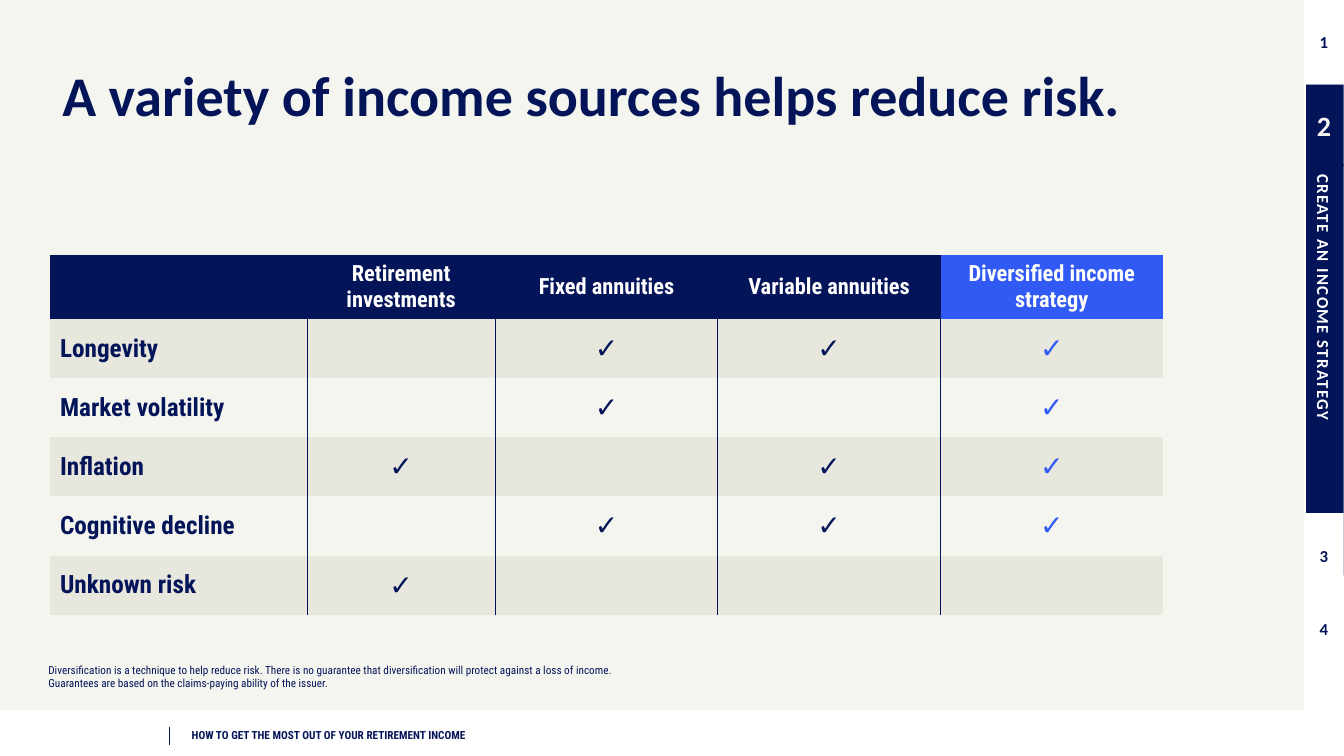
from lxml import etree
from pptx import Presentation
from pptx import util as u
from pptx.dml.color import RGBColor
from pptx.enum import shapes, text
from pptx.oxml import ns

NAVY = RGBColor(0x04, 0x14, 0x59)
BLUE = RGBColor(0x30, 0x5A, 0xF3)
IVORY = RGBColor(0xF5, 0xF5, 0xF0)
SAND = RGBColor(0xE7, 0xE7, 0xDD)
WHITE = RGBColor(0xFF, 0xFF, 0xFF)
CONDENSED = "Roboto Condensed"
PLAIN_TABLE = "{2D5ABB26-0587-4C30-8999-92F81FD0307C}"

HEADINGS = ["", "Retirement investments", "Fixed annuities",
            "Variable annuities", "Diversified income strategy"]
COVERAGE = [
    ("Longevity", "", "✓", "✓", "✓"),
    ("Market volatility", "", "✓", "", "✓"),
    ("Inflation", "✓", "", "✓", "✓"),
    ("Cognitive decline", "", "✓", "✓", "✓"),
    ("Unknown risk", "✓", "", "", ""),
]
COLUMN_WIDTHS = [6.48, 4.74, 5.61, 5.61, 5.61]
ROW_HEIGHT = 1.49
DISCLOSURES = [
    "Diversification is a technique to help reduce risk. There is no guarantee "
    "that diversification will protect against a loss of income.",
    "Guarantees are based on the claims-paying ability of the issuer.",
]


def write(paragraph, wording, size=12, font="Calibri", color=NAVY, bold=True,
          align=text.PP_ALIGN.LEFT, spacing=None, after=None, tracking=None):
    paragraph.alignment = align
    paragraph.line_spacing = spacing
    if after is not None:
        paragraph.space_after = u.Pt(after)
    run = paragraph.add_run()
    run.text = wording
    run.font.size = u.Pt(size)
    run.font.name = font
    run.font.bold = bold
    run.font.color.rgb = color
    if tracking:
        run.font._element.set("spc", str(tracking))


def add_block(slide, left, top, width, height, fill):
    block = slide.shapes.add_shape(shapes.MSO_SHAPE.RECTANGLE, u.Cm(left),
                                   u.Cm(top), u.Cm(width), u.Cm(height))
    block.shadow.inherit = False
    block.fill.solid()
    block.fill.fore_color.rgb = fill
    block.line.fill.background()
    return block


def add_tab(slide, top, height, wording, fill=WHITE, vertical=False, **style):
    tab = add_block(slide, 32.87, top, 0.99, height, fill)
    tab.text_frame.vertical_anchor = text.MSO_ANCHOR.MIDDLE
    if vertical:
        tab.element.txBody.bodyPr.set("vert", "vert")
    write(tab.text_frame.paragraphs[0], wording, **style)


def add_rule(slide, x, top, bottom, color, weight):
    rule = slide.shapes.add_connector(shapes.MSO_CONNECTOR.STRAIGHT, u.Cm(x),
                                      u.Cm(top), u.Cm(x), u.Cm(bottom))
    rule.line.color.rgb = color
    rule.line.width = u.Pt(weight)
    etree.SubElement(rule.element.spPr, ns.qn("a:effectLst"))


def add_text(slide, left, top, width, height, wordings, inset=None,
             anchor=text.MSO_ANCHOR.TOP, **style):
    frame = slide.shapes.add_textbox(u.Cm(left), u.Cm(top), u.Cm(width),
                                     u.Cm(height)).text_frame
    frame.word_wrap = True
    frame.vertical_anchor = anchor
    if inset is not None:
        frame.margin_left = frame.margin_right = u.Cm(inset)
        frame.margin_top = frame.margin_bottom = u.Cm(inset)
    for index, wording in enumerate(wordings):
        paragraph = frame.add_paragraph() if index else frame.paragraphs[0]
        write(paragraph, wording, **style)


def add_border(cell, side):
    border = etree.SubElement(cell._tc.get_or_add_tcPr(), ns.qn(f"a:{side}"),
                              w=str(u.Pt(1)))
    fill = etree.SubElement(border, ns.qn("a:solidFill"))
    etree.SubElement(fill, ns.qn("a:srgbClr"), val=str(NAVY))


def cell_look(row, column):
    last = column == len(HEADINGS) - 1
    centred = text.PP_ALIGN.CENTER
    if row == 0:
        return BLUE if last else NAVY, dict(size=16, font=CONDENSED,
                                            color=WHITE, align=centred)
    band = SAND if row % 2 else IVORY
    if column == 0:
        return band, dict(size=18, font=CONDENSED)
    return band, dict(size=20, font="Cabin", align=centred,
                      color=BLUE if last else NAVY)


def add_coverage_table(slide):
    rows = [HEADINGS, *COVERAGE]
    table = slide.shapes.add_table(
        len(rows), len(HEADINGS), u.Cm(1.26), u.Cm(6.43),
        u.Cm(sum(COLUMN_WIDTHS)), u.Cm(ROW_HEIGHT * len(rows))).table
    table.first_row = table.horz_banding = False
    table._tbl.tblPr.find(ns.qn("a:tableStyleId")).text = PLAIN_TABLE
    for column, width in zip(table.columns, COLUMN_WIDTHS):
        column.width = u.Cm(width)
    for r, wordings in enumerate(rows):
        table.rows[r].height = u.Cm(ROW_HEIGHT)
        for c, wording in enumerate(wordings):
            cell = table.cell(r, c)
            fill, style = cell_look(r, c)
            if c > 0:
                add_border(cell, "lnL")
            if c < len(HEADINGS) - 1:
                add_border(cell, "lnR")
            cell.fill.solid()
            cell.fill.fore_color.rgb = fill
            cell.vertical_anchor = text.MSO_ANCHOR.MIDDLE
            if wording:
                write(cell.text_frame.paragraphs[0], wording, **style)


def main():
    deck = Presentation()
    deck.slide_width, deck.slide_height = u.Cm(33.87), u.Cm(19.05)
    slide = deck.slides.add_slide(deck.slide_layouts[6])
    centred = text.PP_ALIGN.CENTER

    add_rule(slide, 4.27, 18.31, 18.77, NAVY, 1)
    add_text(slide, 4.83, 18.36, 17.6, 0.33,
             ["HOW TO GET THE MOST OUT OF YOUR RETIREMENT INCOME"],
             inset=0, size=8, font=CONDENSED)

    add_tab(slide, 2.13, 2.06, "2", fill=NAVY, size=20, color=IVORY,
            align=centred)
    add_tab(slide, 4.14, 10.36, "CREATE AN INCOME STRATEGY", fill=NAVY,
            vertical=True, color=WHITE, tracking=100)
    for number, top in (("3", 12.93), ("1", 0), ("4", 14.78)):
        add_tab(slide, top, 2.13, number, align=centred)

    add_block(slide, 0, 0, 32.89, 17.9, IVORY)
    add_rule(slide, 32.89, 0, 19.05, WHITE, 1.5)
    add_text(slide, 1.32, 1.6, 28.6, 1.65,
             ["A variety of income sources helps reduce risk."],
             size=40, spacing=0.9)
    add_coverage_table(slide)
    add_text(slide, 0.97, 16.43, 31.09, 1.09, DISCLOSURES,
             anchor=text.MSO_ANCHOR.BOTTOM, size=8, font=CONDENSED,
             bold=False, spacing=0.9, after=1)
    deck.save("out.pptx")


if __name__ == "__main__":
    main()
